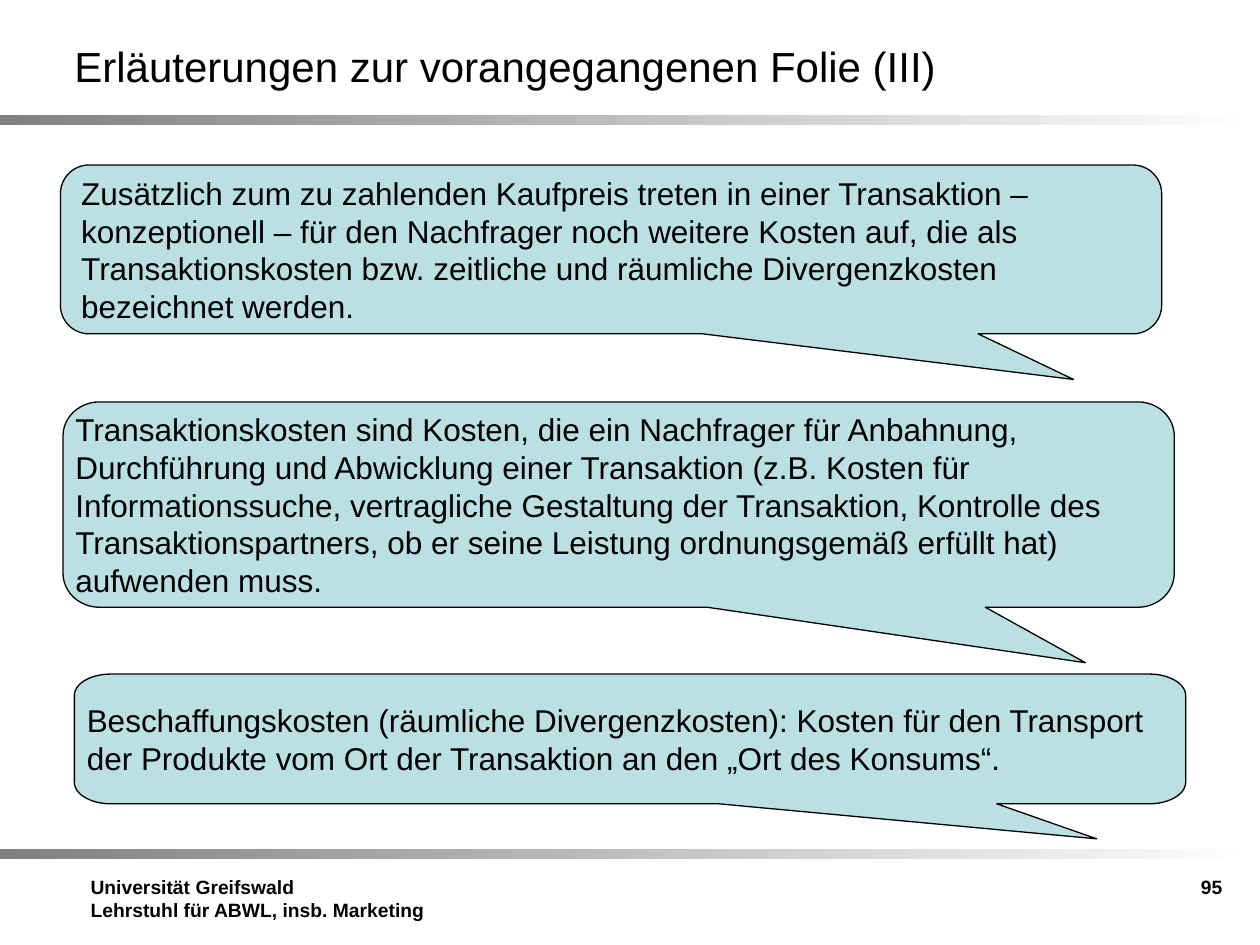
from dataclasses import dataclass
from math import cos, pi, sin

from pptx import Presentation
from pptx.dml.color import RGBColor
from pptx.enum.shapes import MSO_SHAPE
from pptx.enum.text import MSO_ANCHOR, MSO_AUTO_SIZE, PP_ALIGN
from pptx.shapes.autoshape import Shape
from pptx.slide import Slide
from pptx.util import Inches, Pt

COLORS = {"ink": "000000", "callout": "BBE0E3", "bar_start": "808080", "bar_end": "FFFFFF"}
SLIDE_WIDTH, SLIDE_HEIGHT = Inches(10), Inches(7.5)
COLUMN, ROW = SLIDE_WIDTH // 1000, SLIDE_HEIGHT // 750
TAIL_START, TAIL_END = 0.58, 0.83
TIP_ACROSS, TIP_DOWN = 0.92, 1.27
CORNER_STEPS = 12


@dataclass(frozen=True)
class Area:
    """A rectangle in grid columns and rows."""

    column: int
    row: int
    columns: int
    rows: int

    def emu(self) -> tuple[int, int, int, int]:
        """Return left, top, width and height in slide units."""
        return self.column * COLUMN, self.row * ROW, self.columns * COLUMN, self.rows * ROW


@dataclass(frozen=True)
class Callout:
    """A speech bubble; corner radii of None mean the preset shape."""

    area: Area
    text: str
    corner: tuple[int, int] | None = None


@dataclass(frozen=True)
class TextStyle:
    """Text format of a shape."""

    size: int
    bold: bool = False
    alignment: PP_ALIGN = PP_ALIGN.LEFT
    anchor: MSO_ANCHOR = MSO_ANCHOR.MIDDLE


TITLE = "Erläuterungen zur vorangegangenen Folie (III)"
TITLE_AREA = Area(49, 21, 900, 63)
BARS = [Area(0, 91, 1000, 8), Area(0, 674, 1000, 8)]
FOOTERS = [
    (Area(62, 690, 291, 59), "Universität Greifswald\nLehrstuhl für ABWL, insb. Marketing", PP_ALIGN.LEFT),
    (Area(747, 690, 233, 57), "95", PP_ALIGN.RIGHT),
]
CALLOUTS = [
    Callout(
        Area(48, 131, 874, 134),
        "Zusätzlich zum zu zahlenden Kaufpreis treten in einer Transaktion – konzeptionell – "
        "für den Nachfrager noch weitere Kosten auf, die als Transaktionskosten bzw. zeitliche "
        "und räumliche Divergenzkosten bezeichnet werden.",
    ),
    Callout(
        Area(50, 319, 882, 163),
        "Transaktionskosten sind Kosten, die ein Nachfrager für Anbahnung, Durchführung und "
        "Abwicklung einer Transaktion (z.B. Kosten für Informationssuche, vertragliche Gestaltung "
        "der Transaktion, Kontrolle des Transaktionspartners, ob er seine Leistung ordnungsgemäß "
        "erfüllt hat) aufwenden muss.",
        (29, 27),
    ),
    Callout(
        Area(59, 535, 882, 103),
        "Beschaffungskosten (räumliche Divergenzkosten): Kosten für den Transport der Produkte "
        "vom Ort der Transaktion an den „Ort des Konsums“.",
        (29, 17),
    ),
]


def color(name: str) -> RGBColor:
    """Look up a colour by name."""
    return RGBColor.from_string(COLORS[name])


def write(shape: Shape, text: str, style: TextStyle) -> None:
    """Fill a shape with formatted text."""
    frame = shape.text_frame
    frame.text = text
    frame_format = {"word_wrap": True, "auto_size": MSO_AUTO_SIZE.NONE, "vertical_anchor": style.anchor}
    for name, value in frame_format.items():
        setattr(frame, name, value)
    for paragraph in frame.paragraphs:
        paragraph.alignment = style.alignment
        font_format = {"name": "Arial", "size": Pt(style.size), "bold": style.bold}
        for name, value in font_format.items():
            setattr(paragraph.font, name, value)
        paragraph.font.color.rgb = color("ink")


def add_title(slide: Slide) -> None:
    """Place and format the title placeholder."""
    title = slide.shapes.title
    for name, value in zip(("left", "top", "width", "height"), TITLE_AREA.emu()):
        setattr(title, name, value)
    write(title, TITLE, TextStyle(24))


def add_bar(slide: Slide, area: Area) -> None:
    """Draw a horizontal bar that fades to the right."""
    bar = slide.shapes.add_shape(MSO_SHAPE.RECTANGLE, *area.emu())
    bar.shadow.inherit = False
    bar.line.fill.background()
    bar.fill.gradient()
    bar.fill.gradient_angle = 0
    for stop, name in zip(bar.fill.gradient_stops, ("bar_start", "bar_end")):
        stop.color.rgb = color(name)


def bubble_outline(area: Area, corner: tuple[int, int]) -> list[tuple[float, float]]:
    """Trace elliptical corners clockwise, with the tail on the bottom edge."""
    left, top, width, height = area.emu()
    radius_x, radius_y = corner[0] * COLUMN, corner[1] * ROW
    near_x, far_x = left + radius_x, left + width - radius_x
    near_y, far_y = top + radius_y, top + height - radius_y
    centers = [(near_x, near_y), (far_x, near_y), (far_x, far_y), (near_x, far_y)]
    points = []
    for index, (center_x, center_y) in enumerate(centers):
        for step in range(CORNER_STEPS + 1):
            angle = pi + (index + step / CORNER_STEPS) * pi / 2
            points.append((center_x + radius_x * cos(angle), center_y + radius_y * sin(angle)))
        if index == 2:
            tail = [(TAIL_END, 1), (TIP_ACROSS, TIP_DOWN), (TAIL_START, 1)]
            points += [(left + across * width, top + down * height) for across, down in tail]
    return points


def add_bubble(slide: Slide, area: Area, corner: tuple[int, int]) -> Shape:
    """Build a bubble whose frame is its body, leaving the tail outside."""
    points = bubble_outline(area, corner)
    builder = slide.shapes.build_freeform(*points[0])
    builder.add_line_segments(points[1:], close=True)
    bubble = builder.convert_to_shape()
    bubble.height = area.rows * ROW
    for outline in bubble.element.xpath(".//a:path"):
        outline.set("h", str(bubble.height))
    return bubble


def add_callout(slide: Slide, callout: Callout) -> None:
    """Draw one speech bubble with its text."""
    if callout.corner:
        shape = add_bubble(slide, callout.area, callout.corner)
    else:
        shape = slide.shapes.add_shape(MSO_SHAPE.ROUNDED_RECTANGULAR_CALLOUT, *callout.area.emu())
        for index, value in enumerate((TIP_ACROSS - 0.5, TIP_DOWN - 0.5, 0.17)):
            shape.adjustments[index] = value
    shape.shadow.inherit = False
    shape.fill.solid()
    shape.fill.fore_color.rgb = color("callout")
    shape.line.color.rgb = color("ink")
    shape.line.width = Pt(0.75)
    write(shape, callout.text, TextStyle(18))


def main() -> None:
    """Build and save the slide."""
    presentation = Presentation()
    presentation.slide_width, presentation.slide_height = SLIDE_WIDTH, SLIDE_HEIGHT
    slide = presentation.slides.add_slide(presentation.slide_layouts[5])
    add_title(slide)
    for area in BARS:
        add_bar(slide, area)
    for callout in CALLOUTS:
        add_callout(slide, callout)
    for area, text, alignment in FOOTERS:
        write(slide.shapes.add_textbox(*area.emu()), text, TextStyle(11, True, alignment, MSO_ANCHOR.TOP))
    presentation.save("out.pptx")


if __name__ == "__main__":
    main()
